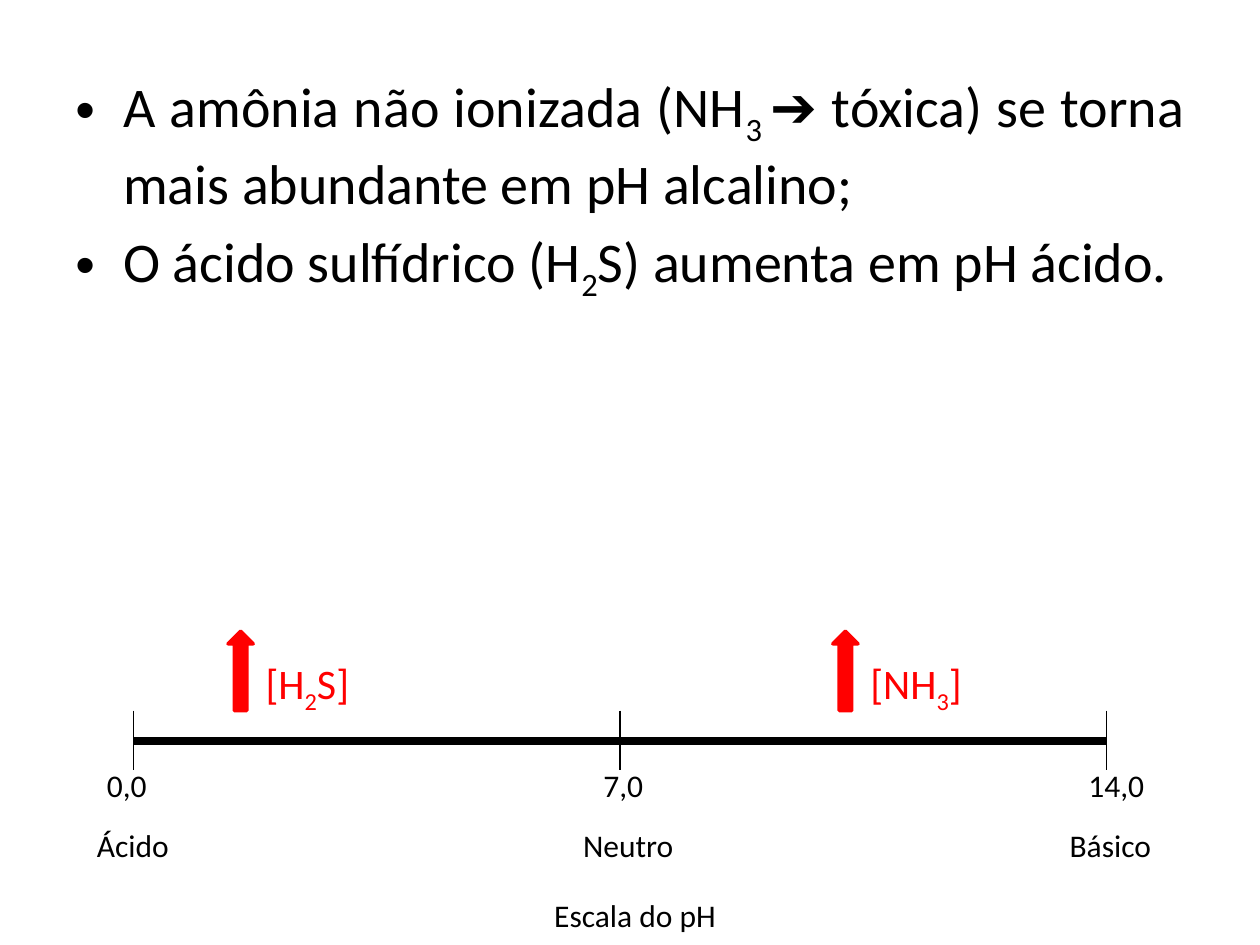
from dataclasses import dataclass

from lxml import etree
from pptx import Presentation
from pptx import util as u
from pptx.dml.color import RGBColor
from pptx.enum import shapes, text
from pptx.oxml.ns import qn

COLORS = {"ink": "000000", "alert": "FF0000", "paper": "FFFFFF"}
FONT = "Calibri"
AXIS_LEFT, AXIS_MIDDLE, AXIS_RIGHT, AXIS_Y = 1.06, 4.92, 8.78, 5.88
TICK_TOP, TICK_BOTTOM = 5.64, 6.11

Runs = list[tuple[str, bool]]  # text, is subscript


@dataclass
class Mark:
    x: float
    value: str
    value_left: float
    name: str
    name_left: float


@dataclass
class Rise:
    left: float
    formula: Runs


BULLETS: list[Runs] = [
    [("A amônia não ionizada (NH", False), ("3 ", True),
     ("➔ tóxica) se torna mais abundante em pH alcalino;", False)],
    [("O ácido sulfídrico (H", False), ("2", True),
     ("S) aumenta em pH ácido.", False)],
]
MARKS = [
    Mark(AXIS_LEFT, "0,0", 0.75, "Ácido", 0.67),
    Mark(AXIS_RIGHT, "14,0", 8.54, "Básico", 8.39),
    Mark(AXIS_MIDDLE, "7,0", 4.69, "Neutro", 4.53),
]
RISES = [
    Rise(1.81, [("[H", False), ("2", True), ("S]", False)]),
    Rise(6.61, [("[NH", False), ("3", True), ("]", False)]),
]


def color(name: str) -> RGBColor:
    return RGBColor.from_string(COLORS[name])


def add_runs(paragraph, runs: Runs, size: float, ink: str) -> None:
    for words, subscript in runs:
        run = paragraph.add_run()
        run.text = words
        run.font.name = FONT
        run.font.size = u.Pt(size)
        run.font.color.rgb = color(ink)
        if subscript:
            run.font._element.set("baseline", "-25000")


def add_frame(slide, left: float, top: float, width: float, height: float):
    box = slide.shapes.add_textbox(
        u.Inches(left), u.Inches(top), u.Inches(width), u.Inches(height))
    box.text_frame.word_wrap = True
    return box.text_frame


def add_label(slide, left: float, top: float, width: float, runs: Runs,
              size: float = 18, ink: str = "ink",
              align=text.PP_ALIGN.LEFT) -> None:
    frame = add_frame(slide, left, top, width, 0.5 if size > 18 else 0.4)
    frame.auto_size = text.MSO_AUTO_SIZE.SHAPE_TO_FIT_TEXT
    frame.paragraphs[0].alignment = align
    add_runs(frame.paragraphs[0], runs, size, ink)


def add_bullets(slide) -> None:
    frame = add_frame(slide, 0.5, 0.52, 9, 6.18)
    for index, runs in enumerate(BULLETS):
        paragraph = frame.add_paragraph() if index else frame.paragraphs[0]
        paragraph.alignment = text.PP_ALIGN.JUSTIFY
        paragraph.space_before = u.Pt(6.4)
        properties = paragraph._p.get_or_add_pPr()
        properties.set("marL", str(u.Inches(0.38)))
        properties.set("indent", str(u.Inches(-0.38)))
        etree.SubElement(properties, qn("a:buFont"), typeface="Arial")
        etree.SubElement(properties, qn("a:buChar"), char="•")
        add_runs(paragraph, runs, 32, "ink")


def add_line(slide, x1: float, y1: float, x2: float, y2: float,
             width: float) -> None:
    line = slide.shapes.add_connector(
        shapes.MSO_CONNECTOR.STRAIGHT,
        u.Inches(x1), u.Inches(y1), u.Inches(x2), u.Inches(y2))
    line.line.color.rgb = color("ink")
    line.line.width = u.Pt(width)
    etree.SubElement(line._element.spPr, qn("a:effectLst"))


def add_rise(slide, rise: Rise) -> None:
    add_label(slide, rise.left + 0.2, 5.17, 1.73, rise.formula, 24, "alert")
    arrow = slide.shapes.add_shape(
        shapes.MSO_SHAPE.UP_ARROW,
        u.Inches(rise.left), u.Inches(5.01), u.Inches(0.2), u.Inches(0.63))
    arrow.shadow.inherit = False
    arrow.fill.solid()
    arrow.fill.fore_color.rgb = color("alert")
    arrow.line.color.rgb = color("alert")
    arrow.line.width = u.Pt(2)


def main() -> None:
    presentation = Presentation()
    presentation.slide_width = u.Inches(10)
    presentation.slide_height = u.Inches(7.5)
    slide = presentation.slides.add_slide(presentation.slide_layouts[6])
    slide.background.fill.solid()
    slide.background.fill.fore_color.rgb = color("paper")

    # Statements
    add_bullets(slide)

    # pH scale with its marks
    add_line(slide, AXIS_LEFT, AXIS_Y, AXIS_RIGHT, AXIS_Y, 5)
    for mark in MARKS:
        add_line(slide, mark.x, TICK_TOP, mark.x, TICK_BOTTOM, 0.75)
        add_label(slide, mark.value_left, 6.03, 0.71, [(mark.value, False)])
        add_label(slide, mark.name_left, 6.51, 1.18, [(mark.name, False)])

    # Rising concentrations
    for rise in RISES:
        add_rise(slide, rise)

    # Caption
    add_label(slide, 1.85, 7.06, 6.38, [("Escala do pH", False)],
              align=text.PP_ALIGN.CENTER)

    presentation.save("out.pptx")


if __name__ == "__main__":
    main()
